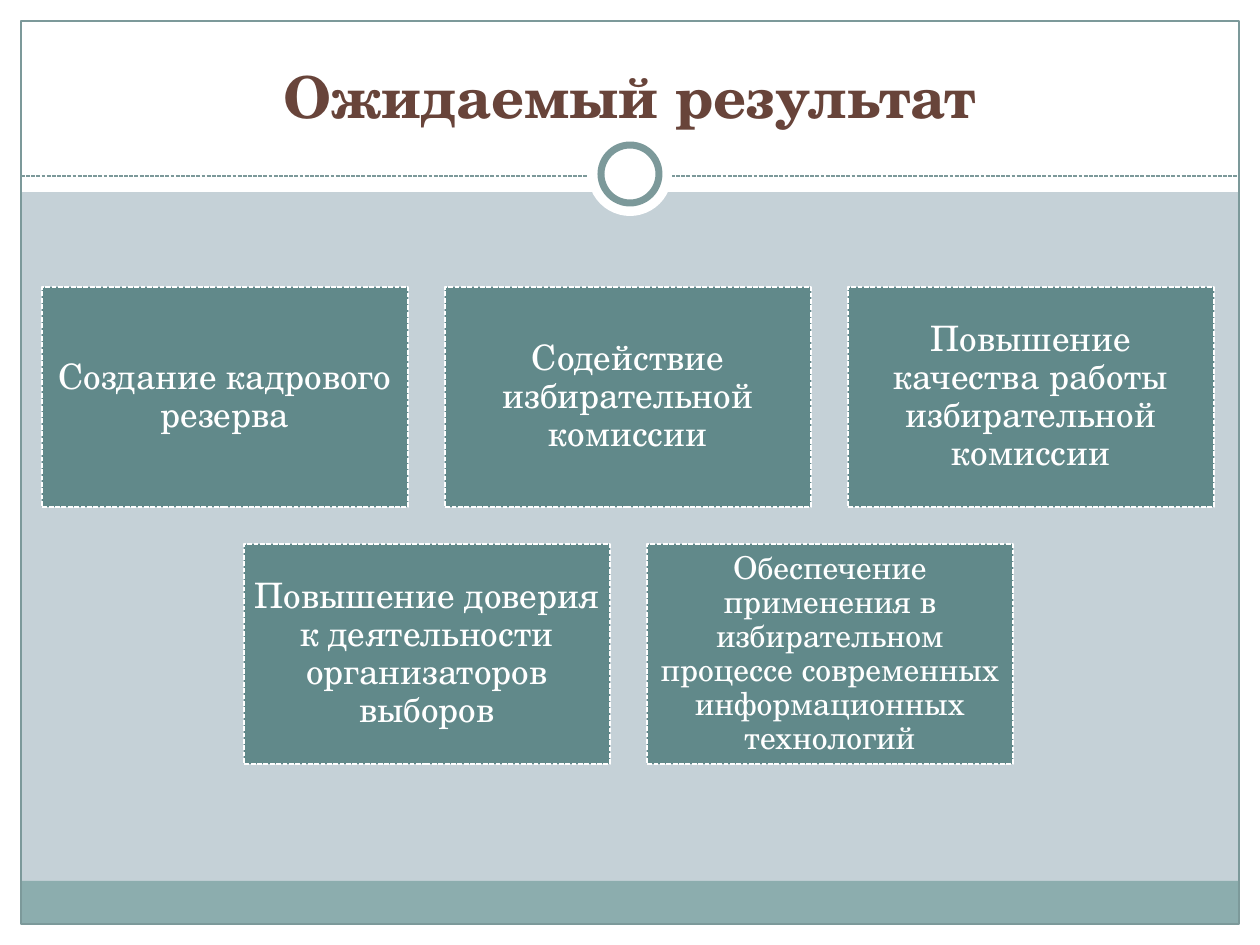
"""Build a slide with five expected results as a centred grid of boxes."""
from dataclasses import dataclass

from lxml.etree import SubElement
from pptx import Presentation
from pptx.dml.color import RGBColor as Rgb
from pptx.enum.dml import MSO_LINE as Dash
from pptx.enum.shapes import MSO_CONNECTOR as Link, MSO_SHAPE as Kind
from pptx.enum.text import MSO_ANCHOR as Anchor, PP_ALIGN as Align
from pptx.oxml.ns import qn
from pptx.util import Pt

TITLE = "Ожидаемый результат"
ROWS = [
    [
        ("Создание кадрового резерва", 20),
        ("Содействие избирательной комиссии", 20),
        ("Повышение качества работы избирательной комиссии", 20),
    ],
    [
        ("Повышение доверия к деятельности организаторов выборов", 20),
        ("Обеспечение применения в избирательном процессе современных "
         "информационных технологий", 18),
    ],
]


@dataclass(frozen=True)
class Theme:
    font: str = "TeX Gyre Schola"
    back: str = "C5D1D7"
    white: str = "FFFFFF"
    band: str = "8CADAE"
    rule: str = "7C999A"
    box: str = "61898A"
    head: str = "68443A"
    title: int = 33


THEME = Theme()
PX = 914400 // 126
WIDE, HIGH = 1260, 945
EDGE = 21
MID = WIDE // 2
RULE_Y = 176
RING_Y = 174
BOX_W, BOX_H, GAP = 366, 220, 37
GRID_MID, GRID_TOP = 628, 287


def px(*nums):
    return [n * PX for n in nums]


def stroke(line, color, width, dash=None):
    line.color.rgb = Rgb.from_string(color)
    line.width = Pt(width)
    if dash:
        line.dash_style = dash


def draw(slide, kind, area, fill=None, line=None):
    shape = slide.shapes.add_shape(kind, *px(*area))
    shape.shadow.inherit = False
    if fill:
        shape.fill.solid()
        shape.fill.fore_color.rgb = Rgb.from_string(fill)
    else:
        shape.fill.background()
    if line:
        stroke(shape.line, *line)
    else:
        shape.line.fill.background()
    return shape


def disc(slide, size, line=None):
    area = (MID - size // 2, RING_Y - size // 2, size, size)
    draw(slide, Kind.OVAL, area, THEME.white, line)


def write(shape, text, size, color, bold=False):
    frame = shape.text_frame
    frame.word_wrap = True
    frame.text = text
    para = frame.paragraphs[0]
    para.alignment = Align.CENTER
    font = para.font
    font.name, font.size, font.bold = THEME.font, Pt(size), bold
    font.color.rgb = Rgb.from_string(color)
    return frame, para


def add_frame(slide):
    inner = WIDE - 2 * EDGE
    for area in [
        (0, HIGH - EDGE, WIDE, EDGE),
        (0, 0, WIDE, 192),
        (0, 0, EDGE, HIGH),
        (WIDE - EDGE, 0, EDGE, HIGH),
    ]:
        draw(slide, Kind.RECTANGLE, area, THEME.white)
    draw(slide, Kind.RECTANGLE, (EDGE, 881, inner, 43), THEME.band)
    draw(slide, Kind.RECTANGLE, (EDGE, EDGE, inner, HIGH - 2 * EDGE),
         line=(THEME.rule, 0.75))
    rule = slide.shapes.add_connector(
        Link.STRAIGHT, *px(EDGE, RULE_Y, WIDE - EDGE, RULE_Y))
    stroke(rule.line, THEME.rule, 0.75, Dash.SQUARE_DOT)
    SubElement(rule._element.spPr, qn("a:effectLst"))
    disc(slide, 84)
    disc(slide, 58, (THEME.rule, 4))


def add_title(slide):
    title = slide.shapes.title
    title.left, title.top, title.width, title.height = px(42, 31, 1176, 105)
    frame, _ = write(title, TITLE, THEME.title, THEME.head, True)
    frame.vertical_anchor = Anchor.BOTTOM
    slide.shapes._spTree.append(title._element)


def add_box(slide, left, top, text, size):
    box = draw(slide, Kind.RECTANGLE, (left, top, BOX_W, BOX_H), THEME.box,
               (THEME.white, 0.9, Dash.SQUARE_DOT))
    frame, para = write(box, text, size, THEME.white)
    frame.vertical_anchor = Anchor.MIDDLE
    para.line_spacing = 0.9
    pad = size // 2 * PX
    frame.margin_left = frame.margin_right = pad
    frame.margin_top = frame.margin_bottom = pad


def add_grid(slide):
    for i, row in enumerate(ROWS):
        span = len(row) * (BOX_W + GAP) - GAP
        left = GRID_MID - span // 2
        for j, (text, size) in enumerate(row):
            add_box(slide, left + j * (BOX_W + GAP),
                    GRID_TOP + i * (BOX_H + GAP), text, size)


def main():
    deck = Presentation()
    deck.slide_width, deck.slide_height = px(WIDE, HIGH)
    slide = deck.slides.add_slide(deck.slide_layouts[5])
    fill = slide.background.fill
    fill.solid()
    fill.fore_color.rgb = Rgb.from_string(THEME.back)
    add_frame(slide)
    add_title(slide)
    add_grid(slide)
    deck.save("out.pptx")


if __name__ == "__main__":
    main()
